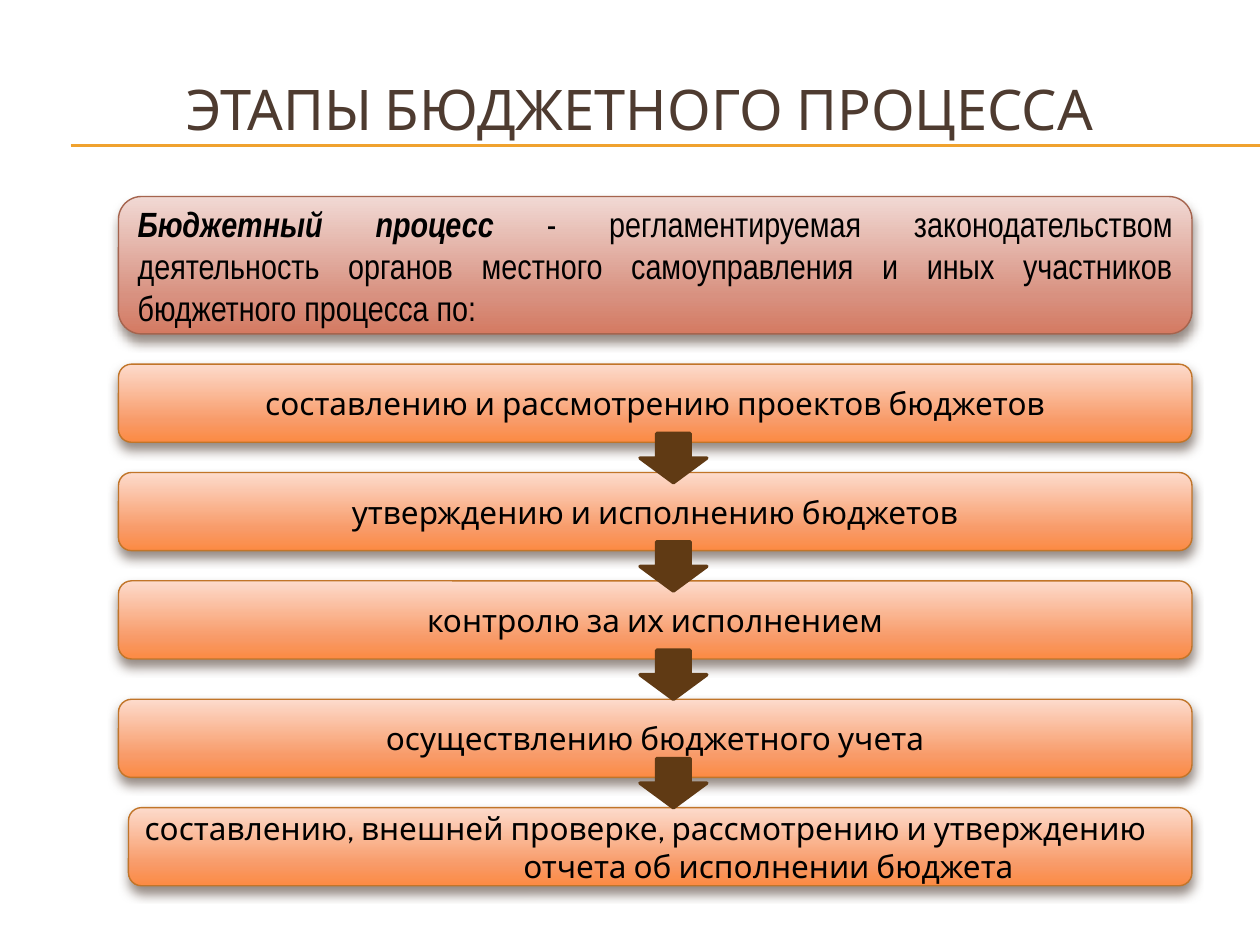
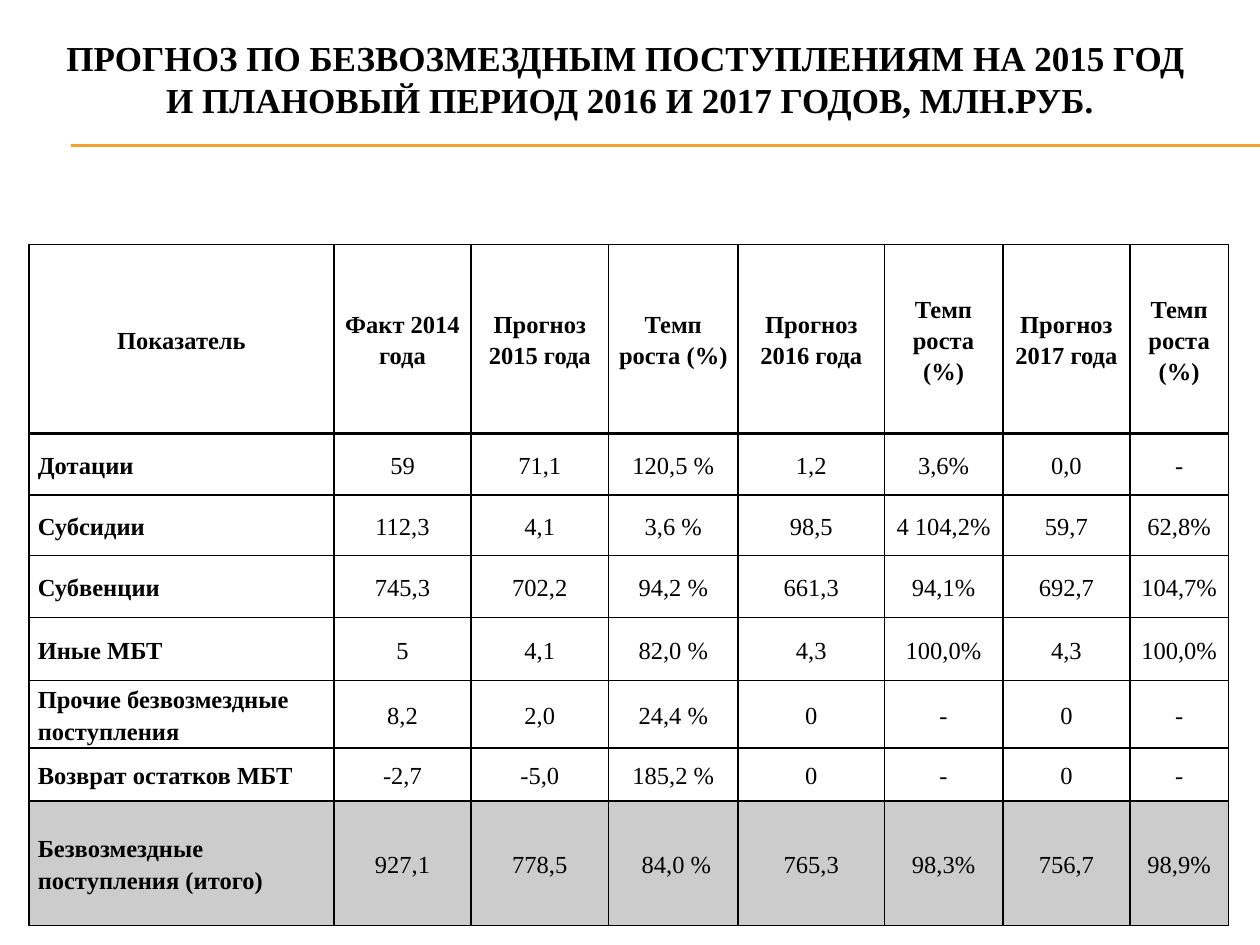
from lxml.etree import SubElement
from pptx import Presentation
from pptx.dml.color import RGBColor
from pptx.enum.shapes import MSO_CONNECTOR as Connector, MSO_SHAPE as Shape
from pptx.enum.text import MSO_ANCHOR as Anchor, PP_ALIGN as Align
from pptx.oxml.ns import qn
from pptx.util import Inches, Pt

SLIDE_WIDTH, SLIDE_HEIGHT = Inches(10), Inches(7.5)
GRID_COLUMNS, GRID_ROWS = 100, 75

BLACK = RGBColor(0x00, 0x00, 0x00)
BROWN = RGBColor(0x4E, 0x3B, 0x30)
GOLD = RGBColor(0xF0, 0xA2, 0x2E)
ARROW_BROWN = RGBColor(0x60, 0x3A, 0x14)
STAGE_EDGE = RGBColor(0xC1, 0x75, 0x29)
DEFINITION_EDGE = RGBColor(0xA5, 0x64, 0x4E)
TOTAL_GREY = RGBColor(0xCC, 0xCC, 0xCC)
STAGE_GRADIENT = {0: RGBColor(0xFD, 0xDB, 0xCC), 72: RGBColor(0xF8, 0x9B, 0x69),
                  100: RGBColor(0xFC, 0x8A, 0x43)}
DEFINITION_GRADIENT = {0: RGBColor(0xF1, 0xD9, 0xD4), 72: RGBColor(0xD8, 0x91, 0x80),
                       100: RGBColor(0xD4, 0x7A, 0x62)}

STAGE_TITLE = {"name": "Cabin", "size": Pt(32)}
FORECAST_TITLE = {"name": "Times New Roman", "size": Pt(20), "bold": True}
STAGE_TEXT = {"name": "Cabin", "size": Pt(18)}
DEFINITION_TEXT = {"name": "Arial Narrow", "size": Pt(20)}
DEFINITION_TERM = {**DEFINITION_TEXT, "bold": True, "italic": True}
TABLE_TEXT = {"name": "Times New Roman", "size": Pt(14), "bold": False}
TABLE_LABEL = {**TABLE_TEXT, "bold": True}
CELL_FRAME = {"vertical_anchor": Anchor.MIDDLE, "margin_left": Inches(0.07),
              "margin_right": Inches(0.07), "margin_top": 0, "margin_bottom": 0}
PLAIN_TABLE_STYLE = "{2D5ABB26-0587-4C30-8999-92F81FD0307C}"

STAGES = [
    "составлению и рассмотрению проектов бюджетов",
    "утверждению и исполнению бюджетов",
    "контролю за их исполнением",
    "осуществлению бюджетного учета",
]
REPORT_STAGE = ["составлению, внешней проверке, рассмотрению и утверждению",
                "отчета об исполнении бюджета"]

COLUMN_WIDTHS = [24.2, 10.9, 10.9, 10.3, 11.6, 9.4, 10.1, 7.8]
ROW_HEIGHTS = [15, 4.9, 4.8, 4.9, 5, 4.9, 4.2, 9.9]
FORECAST = [
    ["Показатель", "Факт 2014 года", "Прогноз 2015 года", "Темп роста (%)",
     "Прогноз 2016 года", "Темп роста (%)", "Прогноз 2017 года", "Темп роста (%)"],
    ["Дотации", "59", "71,1", "120,5 %", "1,2", "3,6%", "0,0", "-"],
    ["Субсидии", "112,3", "4,1", "3,6 %", "98,5", "4 104,2%", "59,7", "62,8%"],
    ["Субвенции", "745,3", "702,2", "94,2 %", "661,3", "94,1%", "692,7", "104,7%"],
    ["Иные МБТ", "5", "4,1", "82,0 %", "4,3", "100,0%", "4,3", "100,0%"],
    ["Прочие безвозмездные поступления", "8,2", "2,0", "24,4 %", "0", "-", "0", "-"],
    ["Возврат остатков МБТ", "-2,7", "-5,0", "185,2 %", "0", "-", "0", "-"],
    ["Безвозмездные поступления (итого)", "927,1", "778,5", " 84,0 %", "765,3",
     "98,3%", "756,7", "98,9%"],
]


def across(columns):
    return round(SLIDE_WIDTH * columns / GRID_COLUMNS)


def down(rows):
    return round(SLIDE_HEIGHT * rows / GRID_ROWS)


def place(left, top, width, height):
    return across(left), down(top), across(width), down(height)


def apply(target, values):
    for attribute, value in values.items():
        setattr(target, attribute, value)


def write(paragraph, text, font, align=Align.CENTER, color=BLACK):
    paragraph.alignment = align
    run = paragraph.add_run()
    run.text = text
    apply(run.font, font)
    run.font.color.rgb = color


def add_color(parent, color, alpha=100):
    swatch = SubElement(parent, qn("a:srgbClr"), val=str(color))
    if alpha < 100:
        SubElement(swatch, qn("a:alpha"), val=str(alpha * 1000))


def add_title(slide, text, area, font, color):
    frame = slide.shapes.add_textbox(*place(*area)).text_frame
    apply(frame, {"word_wrap": True, "vertical_anchor": Anchor.MIDDLE})
    first, *rest = text.split("\n")
    paragraph = frame.paragraphs[0]
    write(paragraph, first, font, color=color)
    for line in rest:
        paragraph.add_line_break()
        write(paragraph, line, font, color=color)


def add_title_rule(slide):
    for row in (11.5, 11.6):
        rule = slide.shapes.add_connector(Connector.STRAIGHT, across(5.6), down(row),
                                          SLIDE_WIDTH, down(row))
        rule.line.color.rgb = GOLD
        rule.line.width = Pt(0.75)
        SubElement(rule._element.spPr, qn("a:effectLst"))


def add_panel(slide, area, gradient, edge):
    panel = slide.shapes.add_shape(Shape.ROUNDED_RECTANGLE, *place(*area))
    panel.fill.gradient()
    panel.fill.gradient_angle = 270
    properties = panel._element.spPr
    stops = properties.find(qn("a:gradFill")).find(qn("a:gsLst"))
    for stop in list(stops):
        stops.remove(stop)
    for position, color in gradient.items():
        add_color(SubElement(stops, qn("a:gs"), pos=str(position * 1000)), color)
    panel.line.color.rgb = edge
    panel.line.width = Pt(0.79)
    panel.shadow.inherit = False
    shadow = SubElement(properties.find(qn("a:effectLst")), qn("a:outerShdw"),
                        blurRad=str(Pt(6)), dist=str(Pt(4)), dir="5400000",
                        rotWithShape="0")
    add_color(shadow, BROWN, 60)
    panel.text_frame.vertical_anchor = Anchor.MIDDLE
    return panel.text_frame


def add_stage(slide, left, top):
    return add_panel(slide, (left, top, 94.6 - left, 6.2), STAGE_GRADIENT, STAGE_EDGE)


def add_arrow(slide, top):
    arrow = slide.shapes.add_shape(Shape.DOWN_ARROW, *place(50.8, top, 5.3, 3.9))
    arrow.fill.solid()
    arrow.fill.fore_color.rgb = ARROW_BROWN
    arrow.line.color.rgb = ARROW_BROWN
    arrow.line.width = Pt(2)
    arrow.shadow.inherit = False


def add_borders(cell, widths):
    properties = cell._tc.get_or_add_tcPr()
    for index, (side, width) in enumerate(widths.items()):
        border = SubElement(properties, qn(f"a:ln{side}"), w=str(Pt(width)))
        add_color(SubElement(border, qn("a:solidFill")), BLACK)
        properties.insert(index, border)


def add_forecast_table(slide):
    last = len(FORECAST) - 1
    area = place(2.3, 19.4, sum(COLUMN_WIDTHS), sum(ROW_HEIGHTS))
    graphic = slide.shapes.add_table(len(FORECAST), len(COLUMN_WIDTHS), *area)
    table = graphic.table
    apply(table, {"first_row": False, "horz_banding": False})
    table._tbl.tblPr.find(qn("a:tableStyleId")).text = PLAIN_TABLE_STYLE
    for column, width in zip(table.columns, COLUMN_WIDTHS):
        column.width = across(width)
    for row, height in zip(table.rows, ROW_HEIGHTS):
        row.height = down(height)
    for r, values in enumerate(FORECAST):
        for c, value in enumerate(values):
            cell = table.cell(r, c)
            apply(cell, CELL_FRAME)
            if r == last:
                cell.fill.solid()
                cell.fill.fore_color.rgb = TOTAL_GREY
            else:
                cell.fill.background()
            add_borders(cell, {"L": 1, "R": 1, "T": 2 if r == 1 else 1,
                               "B": 2 if r == 0 else 1})
            paragraph = cell.text_frame.paragraphs[0]
            paragraph.line_spacing = 1.15
            write(paragraph, value, TABLE_LABEL if r == 0 or c == 0 else TABLE_TEXT,
                  Align.LEFT if c == 0 and r > 0 else Align.CENTER)


def build_stages(slide):
    add_title_rule(slide)
    add_title(slide, "ЭТАПЫ БЮДЖЕТНОГО ПРОЦЕССА", (3.3, 3.1, 95, 11), STAGE_TITLE, BROWN)
    pitch, lower_shift = 8.6, 0.8
    tops = [28.9 + pitch * i + (lower_shift if i > 2 else 0)
            for i in range(len(STAGES) + 1)]
    for top, stage in zip(tops, STAGES):
        write(add_stage(slide, 9.4, top).paragraphs[0], stage, STAGE_TEXT)

    report = add_stage(slide, 10.2, tops[-1])
    write(report.paragraphs[0], REPORT_STAGE[0], STAGE_TEXT, Align.LEFT)
    ending = report.add_paragraph()
    write(ending, REPORT_STAGE[1], STAGE_TEXT)
    ending._p.get_or_add_pPr().set("marL", str(across(17.2)))

    definition = add_panel(slide, (9.4, 15.6, 85.2, 10.9), DEFINITION_GRADIENT,
                           DEFINITION_EDGE).paragraphs[0]
    write(definition, "Бюджетный процесс", DEFINITION_TERM, Align.JUSTIFY)
    write(definition, " - регламентируемая законодательством деятельность органов "
          "местного самоуправления и иных участников бюджетного процесса по:",
          DEFINITION_TEXT, Align.JUSTIFY)
    for i in range(len(STAGES)):
        add_arrow(slide, 34.4 + pitch * i)


def build_forecast(slide):
    add_title_rule(slide)
    add_title(slide, "ПРОГНОЗ ПО БЕЗВОЗМЕЗДНЫМ ПОСТУПЛЕНИЯМ НА 2015 ГОД \n"
              "И ПЛАНОВЫЙ ПЕРИОД 2016 И 2017 ГОДОВ, МЛН.РУБ.",
              (0, 0, 100, 12.5), FORECAST_TITLE, BLACK)
    add_forecast_table(slide)


def main():
    deck = Presentation()
    apply(deck, {"slide_width": SLIDE_WIDTH, "slide_height": SLIDE_HEIGHT})
    blank = deck.slide_layouts[6]
    for build in (build_stages, build_forecast):
        build(deck.slides.add_slide(blank))
    deck.save("out.pptx")


if __name__ == "__main__":
    main()
